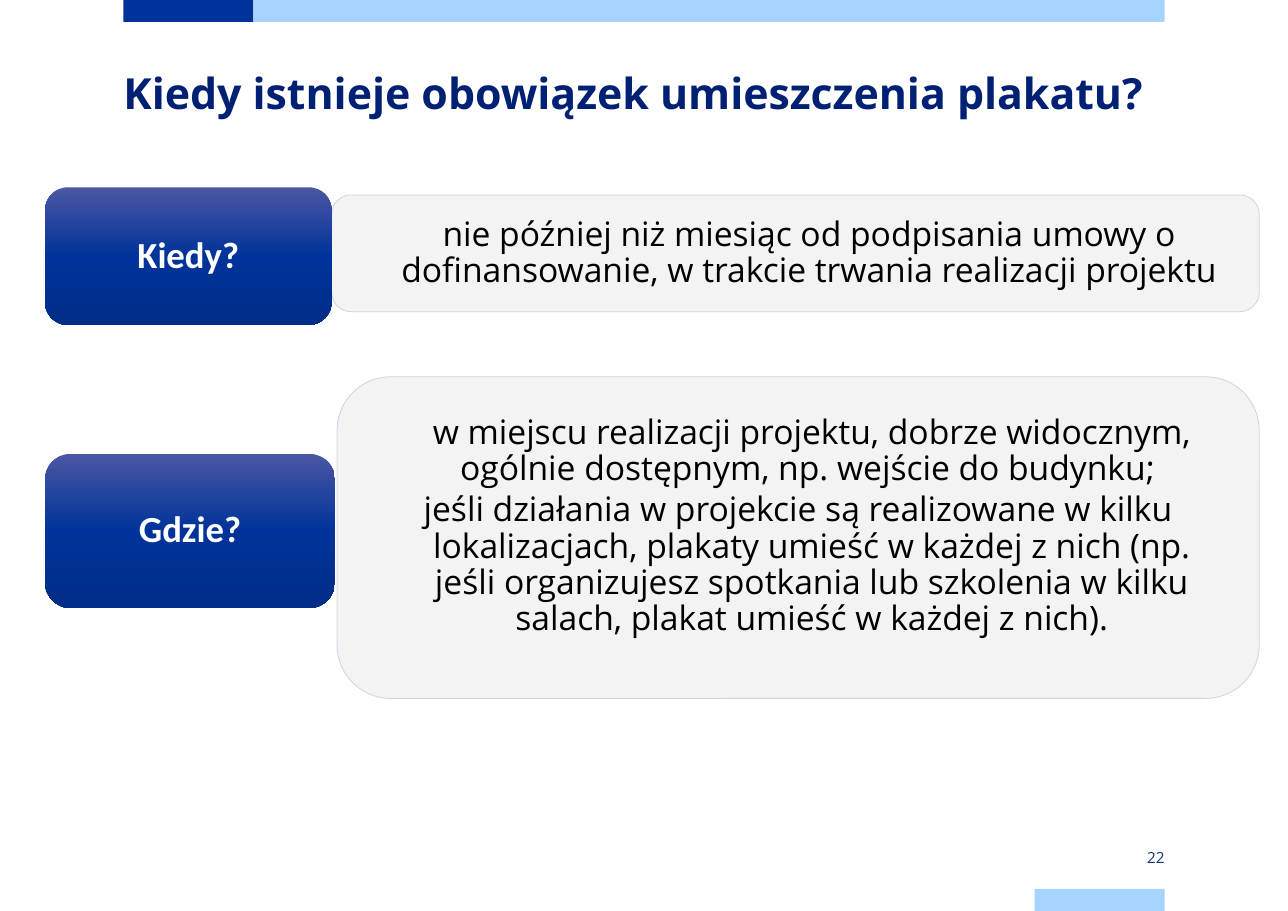
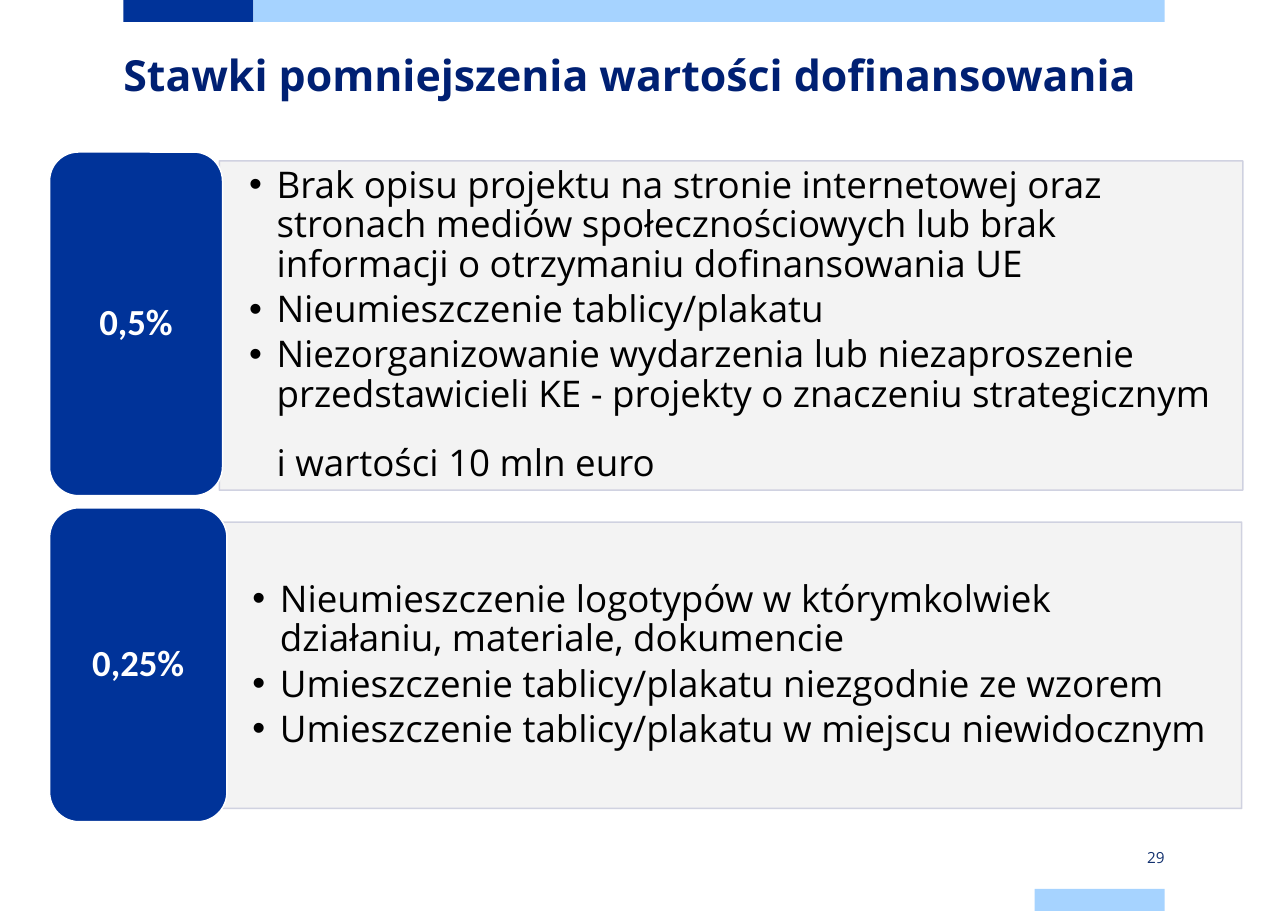
import copy

import pptx
import pptx.dml.color
import pptx.enum.shapes
import pptx.enum.text
import pptx.oxml.ns
import pptx.util
from lxml import etree

Inches = pptx.util.Inches
Pt = pptx.util.Pt
SHAPE = pptx.enum.shapes.MSO_SHAPE
ALIGN = pptx.enum.text.PP_ALIGN
ANCHOR = pptx.enum.text.MSO_ANCHOR
qn = pptx.oxml.ns.qn

COLORS = {
    "navy": "003399", "sky": "A6D3FF", "title": "002073", "number": "11306E",
    "panel": "F2F2F2", "edge": "CCCEDE", "white": "FFFFFF", "black": "000000",
    "label_top": "4B57A4", "label_bottom": "002D88",
}
TEXT_FONT, LABEL_FONT = "Open Sans", "Calibri"
MARGIN_LEFT, MARGIN_RIGHT = 1.12, 10.57
BAND_HEIGHT, ACCENT_WIDTH = 0.2, 1.18


def color(name):
    return pptx.dml.color.RGBColor.from_string(COLORS[name])


# Basic elements
def add_block(slide, kind, box, fill, line=None, line_width=1):
    block = slide.shapes.add_shape(kind, *map(Inches, box))
    block.shadow.inherit = False
    block.fill.solid()
    block.fill.fore_color.rgb = color(fill)
    if line:
        block.line.color.rgb = color(line)
        block.line.width = Pt(line_width)
    else:
        block.line.fill.background()
    return block


def set_frame(frame, anchor, insets=(0, 0, 0, 0)):
    frame.word_wrap = True
    frame.vertical_anchor = anchor
    (frame.margin_left, frame.margin_top,
     frame.margin_right, frame.margin_bottom) = map(Inches, insets)


def write(paragraph, text, size, ink, font=TEXT_FONT, bold=False,
          align=ALIGN.LEFT, spacing=None):
    paragraph.alignment = align
    paragraph.line_spacing = spacing
    for index, line in enumerate(text.split("\n")):
        if index:
            paragraph.add_line_break()
        run = paragraph.add_run()
        run.text = line
        run.font.size = Pt(size)
        run.font.name = font
        run.font.bold = bold
        run.font.color.rgb = color(ink)


def add_text(slide, box, anchor, text, size, ink, **style):
    frame = slide.shapes.add_textbox(*map(Inches, box)).text_frame
    set_frame(frame, anchor)
    write(frame.paragraphs[0], text, size, ink, **style)


def set_indent(paragraph, left, first, bullet=None):
    properties = paragraph._p.get_or_add_pPr()
    properties.set("marL", str(Inches(left)))
    properties.set("indent", str(Inches(first)))
    if bullet:
        etree.SubElement(properties, qn("a:buFont")).set("typeface", "Arial")
        etree.SubElement(properties, qn("a:buChar")).set("char", bullet)


def set_opacity(block, percent):
    for solid in block.element.spPr.iter(qn("a:srgbClr")):
        etree.SubElement(solid, qn("a:alpha")).set("val", str(percent * 1000))


def set_gradient(block, names):
    block.fill.gradient()
    block.fill.gradient_angle = 270
    stop_list = next(block.element.spPr.iter(qn("a:gsLst")))
    stop_list.append(copy.deepcopy(stop_list[0]))
    for index, (stop, name) in enumerate(zip(block.fill.gradient_stops, names)):
        stop.position = index / (len(names) - 1)
        stop.color.rgb = color(name)


# Parts of the content
def add_panel(slide, kind, box, paragraphs, size, line_width, align=ALIGN.LEFT,
              bullet=None, first_indents=None, bottom=0.14):
    panel = add_block(slide, kind, box, "panel", "edge", line_width)
    set_opacity(panel, 90)
    frame = panel.text_frame
    set_frame(frame, ANCHOR.MIDDLE, (0.27, 0.14, 0.27, bottom))
    indents = first_indents or [-0.25] * len(paragraphs)
    for index, (text, first) in enumerate(zip(paragraphs, indents)):
        paragraph = frame.add_paragraph() if index else frame.paragraphs[0]
        set_indent(paragraph, 0.25, first, bullet)
        write(paragraph, text, size, "black", align=align, spacing=0.9)
        paragraph.space_after = Pt(size * 0.15)


def add_label(slide, box, text, gradient=False):
    label = add_block(slide, SHAPE.ROUNDED_RECTANGLE, box, "navy",
                      None if gradient else "white")
    if gradient:
        set_gradient(label, ("label_top", "navy", "label_bottom"))
    set_frame(label.text_frame, ANCHOR.MIDDLE)
    write(label.text_frame.paragraphs[0], text, 24, "white", font=LABEL_FONT,
          bold=True, align=ALIGN.CENTER, spacing=0.9)


# Bands, title and page number shared by the slides
def add_base_slide(deck, title, title_top, number):
    slide = deck.slides.add_slide(deck.slide_layouts[6])
    accent_right = MARGIN_LEFT + ACCENT_WIDTH
    corner_left = MARGIN_RIGHT - ACCENT_WIDTH
    bands = (
        (MARGIN_LEFT, 0, ACCENT_WIDTH, "navy"),
        (accent_right, 0, MARGIN_RIGHT - accent_right, "sky"),
        (corner_left, 8.27 - BAND_HEIGHT, ACCENT_WIDTH, "sky"),
    )
    for left, top, width, fill in bands:
        add_block(slide, SHAPE.RECTANGLE, (left, top, width, BAND_HEIGHT), fill)
    add_text(slide, (MARGIN_LEFT, title_top, MARGIN_RIGHT - MARGIN_LEFT, 0.75),
             ANCHOR.TOP, title, 28, "title", bold=True, spacing=Pt(36))
    add_text(slide, (corner_left, 7.68, ACCENT_WIDTH, 0.2), ANCHOR.MIDDLE,
             str(number), 10, "number", align=ALIGN.RIGHT)
    return slide


def build_poster_slide(deck):
    slide = add_base_slide(deck, "Kiedy istnieje obowiązek umieszczenia plakatu?",
                           0.57, 22)
    style = dict(size=22, line_width=0.5, align=ALIGN.CENTER)
    add_panel(slide, SHAPE.ROUNDED_RECTANGLE, (3.01, 1.77, 8.42, 1.06), [
        "nie później niż miesiąc od podpisania umowy o dofinansowanie, "
        "w trakcie trwania realizacji projektu",
    ], first_indents=[0], **style)
    add_label(slide, (0.41, 1.7, 2.6, 1.25), "Kiedy?", gradient=True)
    add_panel(slide, SHAPE.ROUNDED_RECTANGLE, (3.06, 3.42, 8.37, 2.92), [
        "w miejscu realizacji projektu, dobrze widocznym, ogólnie dostępnym, "
        "np. wejście do budynku; ",
        "jeśli działania w projekcie są realizowane w kilku lokalizacjach, "
        "plakaty umieść w każdej z nich (np. jeśli organizujesz spotkania lub "
        "szkolenia w kilku salach, plakat umieść w każdej z nich).",
    ], first_indents=[0, -0.25], bottom=0.34, **style)
    add_label(slide, (0.41, 4.12, 2.63, 1.4), "Gdzie?", gradient=True)


def build_rates_slide(deck):
    slide = add_base_slide(deck, "Stawki pomniejszenia wartości dofinansowania",
                           0.41, 29)
    style = dict(size=24, line_width=1, bullet="•")
    add_panel(slide, SHAPE.RECTANGLE, (1.99, 1.46, 9.29, 2.99), [
        "Brak opisu projektu na stronie internetowej oraz stronach mediów "
        "społecznościowych lub brak informacji o otrzymaniu dofinansowania UE",
        "Nieumieszczenie tablicy/plakatu",
        "Niezorganizowanie wydarzenia lub niezaproszenie przedstawicieli KE - "
        "projekty o znaczeniu strategicznym \ni wartości 10 mln euro",
    ], **style)
    add_label(slide, (0.45, 1.38, 1.57, 3.12), "0,5%")
    add_panel(slide, SHAPE.RECTANGLE, (2.02, 4.74, 9.25, 2.6), [
        "Nieumieszczenie logotypów w którymkolwiek działaniu, materiale, "
        "dokumencie",
        "Umieszczenie tablicy/plakatu niezgodnie ze wzorem",
        "Umieszczenie tablicy/plakatu w miejscu niewidocznym",
    ], **style)
    add_label(slide, (0.45, 4.61, 1.61, 2.85), "0,25%")


def main():
    deck = pptx.Presentation()
    deck.slide_width, deck.slide_height = Inches(11.69), Inches(8.27)
    build_poster_slide(deck)
    build_rates_slide(deck)
    deck.save("out.pptx")


if __name__ == "__main__":
    main()
